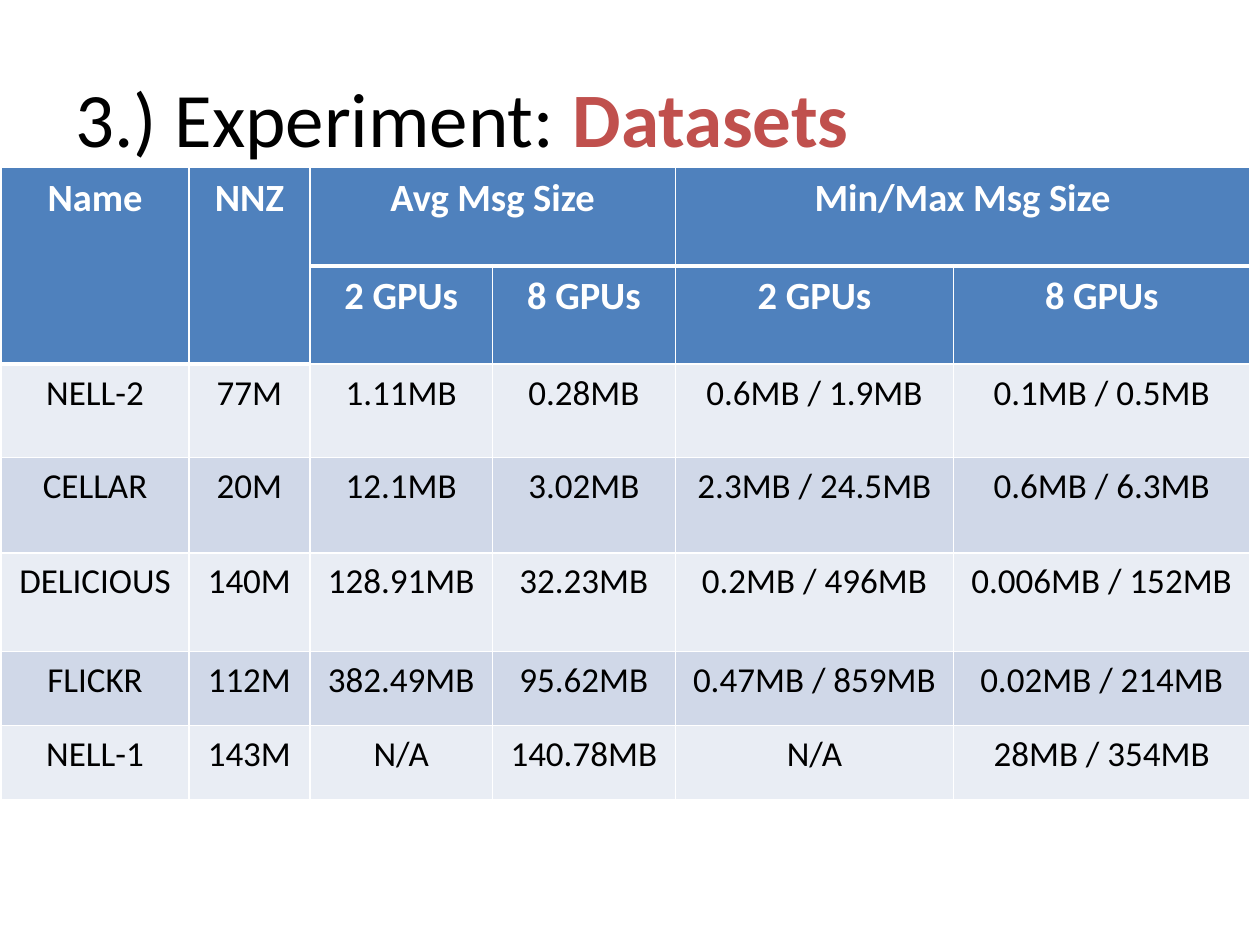
import lxml.etree
import pptx
import pptx.dml.color
import pptx.enum.text
import pptx.oxml.ns
import pptx.util

Inches = pptx.util.Inches
Pt = pptx.util.Pt
qn = pptx.oxml.ns.qn


def color(hex_string):
    return pptx.dml.color.RGBColor.from_string(hex_string)


def add_border(cell, side, width):
    """Draw a white line of the given width in points on side L, R, T or B."""
    line = lxml.etree.SubElement(
        cell._tc.get_or_add_tcPr(), qn(f"a:ln{side}"), w=str(Pt(width)))
    fill = lxml.etree.SubElement(line, qn("a:solidFill"))
    lxml.etree.SubElement(fill, qn("a:srgbClr"), val="FFFFFF")


deck = pptx.Presentation()
deck.slide_width, deck.slide_height = Inches(10), Inches(7.5)
slide = deck.slides.add_slide(deck.slide_layouts[6])

# Title
title = slide.shapes.add_textbox(
    Inches(0.5), Inches(0.3), Inches(9), Inches(1.25)).text_frame
title.word_wrap = True
title.vertical_anchor = pptx.enum.text.MSO_ANCHOR.MIDDLE
for words, ink, bold in [("3.) Experiment: ", "000000", False),
                         ("Datasets", "C0504D", True)]:
    run = title.paragraphs[0].add_run()
    run.text = words
    for name, value in {"name": "Calibri", "size": Pt(44), "bold": bold}.items():
        setattr(run.font, name, value)
    run.font.color.rgb = color(ink)

# Message sizes per dataset; None marks a cell covered by a merged heading
rows = [
    ["Name", "NNZ", "Avg Msg Size", None, "Min/Max Msg Size", None],
    [None, None, "2 GPUs", "8 GPUs", "2 GPUs", "8 GPUs"],
    ["NELL-2", "77M", "1.11MB", "0.28MB", "0.6MB / 1.9MB", "0.1MB / 0.5MB"],
    ["CELLAR", "20M", "12.1MB", "3.02MB", "2.3MB / 24.5MB", "0.6MB / 6.3MB"],
    ["DELICIOUS", "140M", "128.91MB", "32.23MB", "0.2MB / 496MB", "0.006MB / 152MB"],
    ["FLICKR", "112M", "382.49MB", "95.62MB", "0.47MB / 859MB", "0.02MB / 214MB"],
    ["NELL-1", "143M", "N/A", "140.78MB", "N/A", "28MB / 354MB"],
]
column_widths = [1.49, 0.96, 1.45, 1.45, 2.21, 2.35]
row_heights = [0.78, 0.78, 0.74, 0.76, 0.78, 0.59, 0.59]
header_rows = 2
tall_columns = 2

datasets = slide.shapes.add_table(
    len(rows), len(column_widths), Inches(0.01), Inches(1.33),
    Inches(sum(column_widths)), Inches(sum(row_heights))).table
for column, width in zip(datasets.columns, column_widths):
    column.width = Inches(width)
for row, height in zip(datasets.rows, row_heights):
    row.height = Inches(height)

cell_format = {"margin_left": Inches(0.12), "margin_right": Inches(0.12),
               "margin_top": Inches(0.06), "margin_bottom": Inches(0.06)}
for r, texts in enumerate(rows):
    is_header = r < header_rows
    background = "4F81BD" if is_header else ("E9EDF4", "D0D8E8")[r % 2]
    font_format = {"name": "Calibri", "size": Pt(22 if is_header else 20),
                   "bold": is_header}
    for c, text in enumerate(texts):
        cell = datasets.cell(r, c)
        for name, value in cell_format.items():
            setattr(cell, name, value)

        # A heavy line closes each top heading, including the two-row ones
        heading_end = 2 if c < tall_columns else 1
        add_border(cell, "L", 1)
        add_border(cell, "R", 1)
        add_border(cell, "T", 3 if r == heading_end else 1)
        add_border(cell, "B", 3 if r < heading_end else 1)
        cell.fill.solid()
        cell.fill.fore_color.rgb = color(background)

        if text is None:
            continue
        paragraph = cell.text_frame.paragraphs[0]
        paragraph.alignment = pptx.enum.text.PP_ALIGN.CENTER
        run = paragraph.add_run()
        run.text = text
        for name, value in font_format.items():
            setattr(run.font, name, value)
        run.font.color.rgb = color("FFFFFF" if is_header else "000000")

for c in range(tall_columns):
    datasets.cell(0, c).merge(datasets.cell(1, c))
for c in (2, 4):
    datasets.cell(0, c).merge(datasets.cell(0, c + 1))

deck.save("out.pptx")
